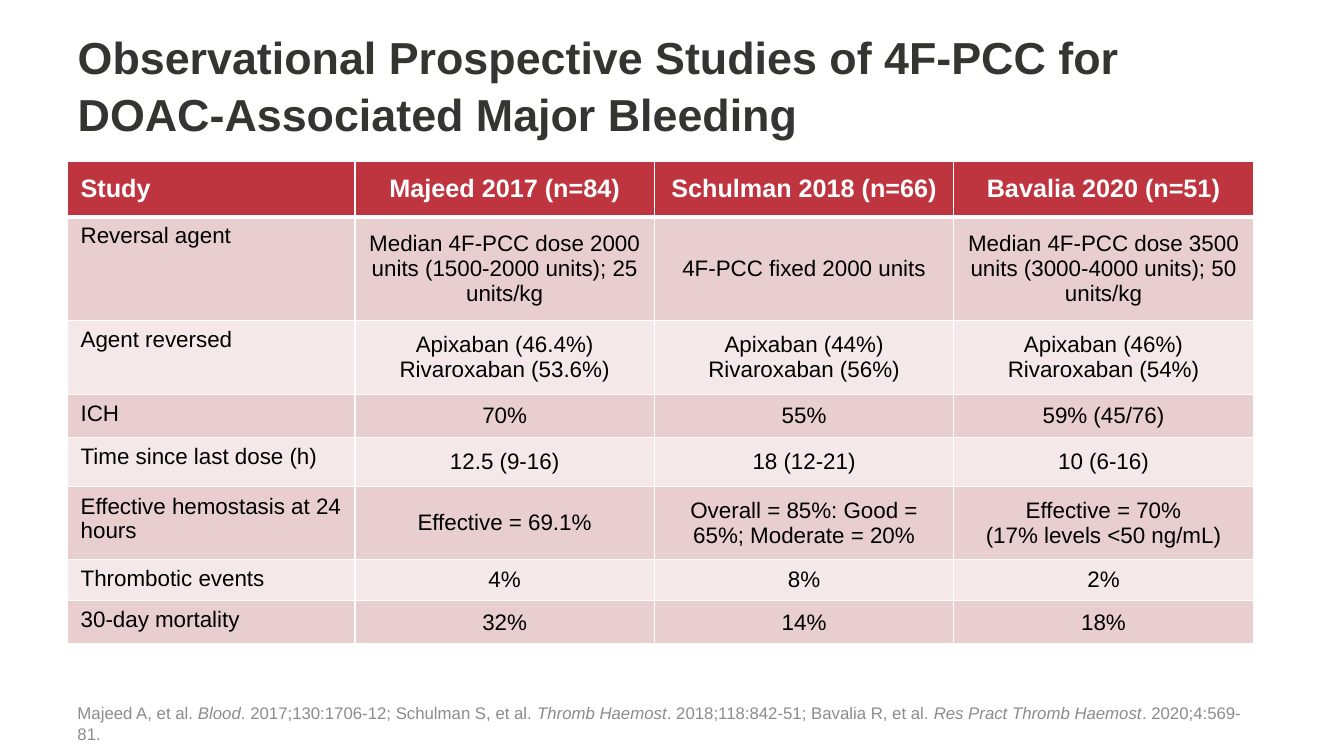
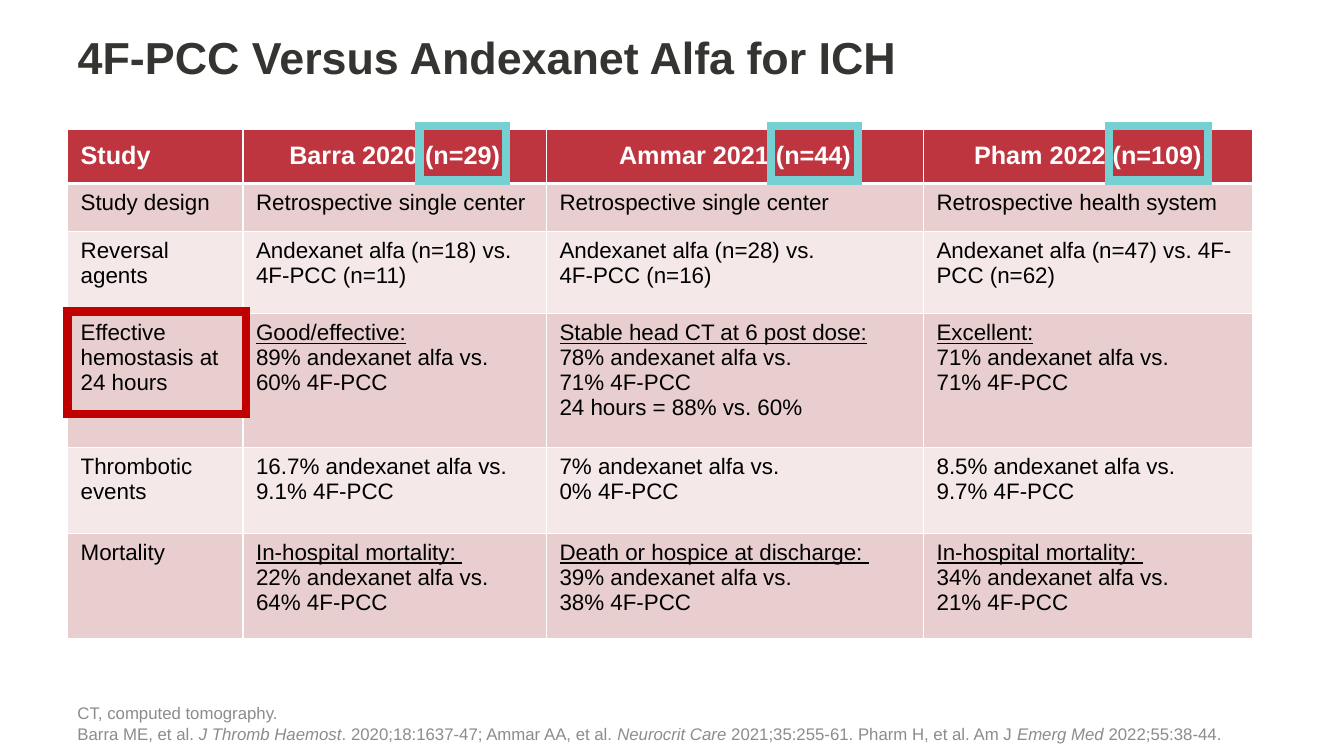
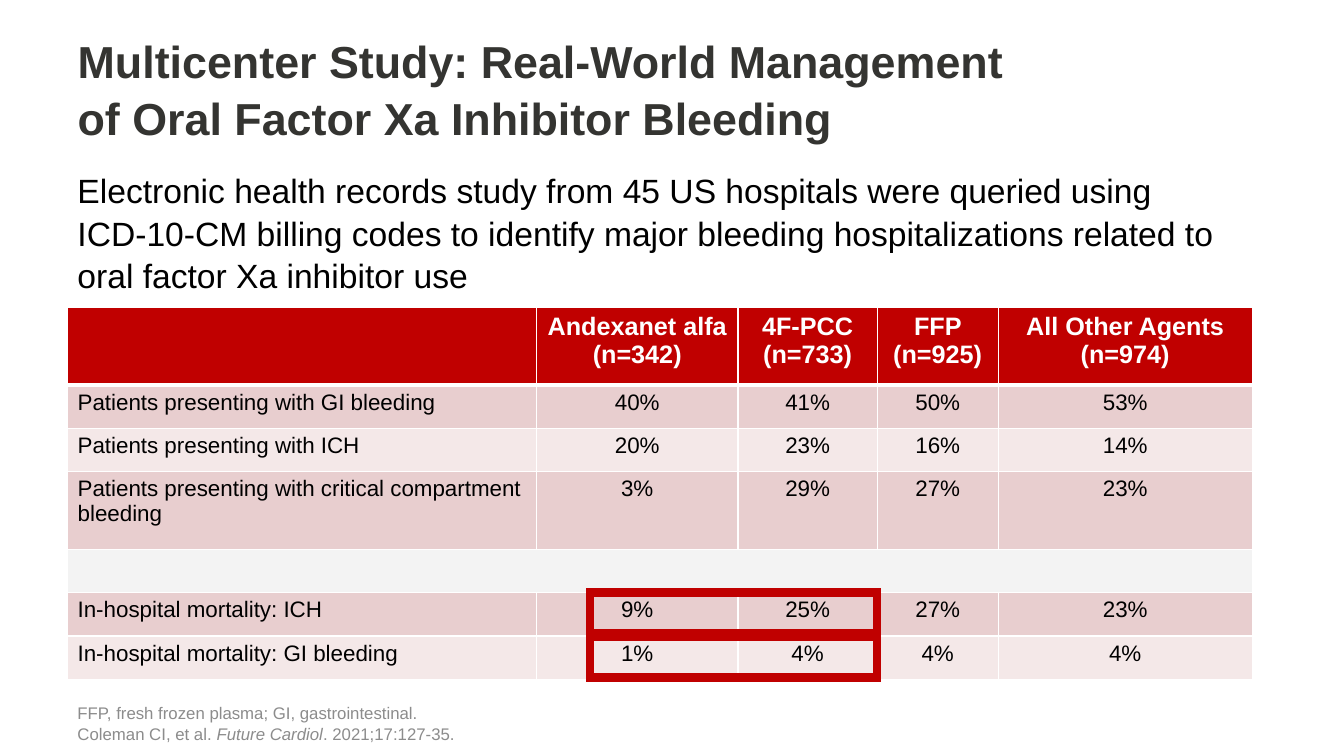
"""Builds three table slides on reversing factor Xa inhibitor bleeding."""
from lxml import etree
from pptx import Presentation
from pptx.dml.color import RGBColor
from pptx.enum import shapes, text
from pptx.oxml import ns
from pptx.util import Inches, Pt

FONT = "Arial"
WHITE = RGBColor(0xFF, 0xFF, 0xFF)
BLACK = RGBColor(0, 0, 0)
DARK = RGBColor(0x34, 0x34, 0x31)
GRAY = RGBColor(0x8C, 0x8C, 0x8C)
ROSE = RGBColor(0xBE, 0x35, 0x40)
RED = RGBColor(0xC0, 0, 0)
TEAL = RGBColor(0x75, 0xD1, 0xD1)
PINK = RGBColor(0xE8, 0xCE, 0xCF)
PALE = RGBColor(0xF4, 0xE8, 0xE8)
MIST = RGBColor(0xF3, 0xF3, 0xF3)
LEFT, WIDTH = 0.67, 11.75
TOP, MID, LOW = (text.MSO_ANCHOR.TOP, text.MSO_ANCHOR.MIDDLE,
                 text.MSO_ANCHOR.BOTTOM)


def write(frame, lines, size, color, bold=False, mark="italic",
          align=text.PP_ALIGN.LEFT, pitch=None):
    """Fill a frame line by line; parts between asterisks get the mark."""
    for i, line in enumerate(lines):
        para = frame.add_paragraph() if i else frame.paragraphs[0]
        para.alignment = align
        para.line_spacing = pitch
        for j, part in enumerate(line.split("*")):
            if not part:
                continue
            para.add_line_break() if part == "\v" else None
            run = para.add_run()
            run.text = part
            font = run.font
            font.name, font.size, font.bold = FONT, Pt(size), bold
            font.color.rgb = color
            if j % 2:
                setattr(font, mark, True)


def add_title(deck, lines, anchor=TOP):
    """Add a title-only slide and place its title."""
    slide = deck.slides.add_slide(deck.slide_layouts[5])
    title = slide.shapes.title
    title.left, title.top = Inches(LEFT), Inches(0.22)
    title.width, title.height = Inches(WIDTH), Inches(1.3)
    frame = title.text_frame
    frame.auto_size = text.MSO_AUTO_SIZE.NONE
    frame.vertical_anchor = anchor
    write(frame, lines, 32, DARK, bold=True, pitch=1.05)
    return slide


def add_text(slide, top, high, lines, size, color, anchor=TOP):
    """Add a full-width text box."""
    box = slide.shapes.add_textbox(Inches(LEFT), Inches(top),
                                   Inches(WIDTH), Inches(high))
    box.text_frame.word_wrap = True
    box.text_frame.vertical_anchor = anchor
    write(box.text_frame, lines, size, color, pitch=1.05)


def add_notes(slide, *lines):
    """Add the source lines at the foot of the slide."""
    add_text(slide, 6.95, 0.48, lines, 12, GRAY, LOW)


def edge(cell, row):
    """Draw white cell borders, thick between header and body."""
    props = cell._tc.get_or_add_tcPr()
    wide = {(0, "B"): 3, (1, "T"): 3}
    for side in "LRTB":
        line = etree.SubElement(props, ns.qn("a:ln" + side),
                                w=str(Pt(wide.get((row, side), 1))))
        fill = etree.SubElement(line, ns.qn("a:solidFill"))
        etree.SubElement(fill, ns.qn("a:srgbClr"), val=str(WHITE))


def add_table(slide, top, cols, highs, rows, head, pads,
              center=True, body=TOP, first=TOP):
    """Add a banded table; an empty row is merged across."""
    grid = slide.shapes.add_table(
        len(rows), len(cols), Inches(LEFT), Inches(top),
        Inches(sum(cols)), Inches(sum(highs))).table
    for col, wide in zip(grid.columns, cols):
        col.width = Inches(wide)
    for row, high in zip(grid.rows, highs):
        row.height = Inches(high)
    for r, row in enumerate(rows):
        fill = head if r == 0 else PINK if r % 2 else PALE
        if not row:
            grid.cell(r, 0).merge(grid.cell(r, len(cols) - 1))
            fill = MIST
        for c in range(len(cols)):
            cell = grid.cell(r, c)
            edge(cell, r)
            cell.fill.solid()
            cell.fill.fore_color.rgb = fill
            cell.margin_left = cell.margin_right = Inches(pads[0])
            cell.margin_top = cell.margin_bottom = Inches(pads[1])
            cell.vertical_anchor = first if r == 0 else body if c else TOP
            if row and row[c]:
                mid = c and (center or r == 0)
                write(cell.text_frame, row[c].split("\n"),
                      16 if r else 18, BLACK if r else WHITE,
                      bold=r == 0, mark="underline",
                      align=text.PP_ALIGN.CENTER if mid
                      else text.PP_ALIGN.LEFT)


def add_frame(slide, left, top, wide, high, color=RED,
              kind=shapes.MSO_SHAPE.RECTANGLE):
    """Add an unfilled, sharp-cornered highlight frame."""
    box = slide.shapes.add_shape(kind, Inches(left), Inches(top),
                                 Inches(wide), Inches(high))
    if len(box.adjustments):
        box.adjustments[0] = 0
    box.shadow.inherit = False
    box.fill.background()
    box.line.color.rgb = color
    box.line.width = Pt(6)
    line = box._element.spPr.find(ns.qn("a:ln"))
    etree.SubElement(line, ns.qn("a:miter"), lim="800000")


def add_trials(deck):
    """Build the slide on prospective studies."""
    slide = add_title(deck, ["Observational Prospective Studies of 4F-PCC "
                             "for DOAC-Associated Major Bleeding"])
    rows = [
        ["Study", "Majeed 2017 (n=84)", "Schulman 2018 (n=66)",
         "Bavalia 2020 (n=51)"],
        ["Reversal agent",
         "Median 4F-PCC dose 2000 units (1500-2000 units); 25 units/kg",
         "4F-PCC fixed 2000 units",
         "Median 4F-PCC dose 3500 units (3000-4000 units); 50 units/kg"],
        ["Agent reversed", "Apixaban (46.4%)\nRivaroxaban (53.6%)",
         "Apixaban (44%)\nRivaroxaban (56%)",
         "Apixaban (46%)\nRivaroxaban (54%)"],
        ["ICH", "70%", "55%", "59% (45/76)"],
        ["Time since last dose (h)", "12.5 (9-16)", "18 (12-21)",
         "10 (6-16)"],
        ["Effective hemostasis at 24 hours", "Effective = 69.1%",
         "Overall = 85%: Good = 65%; Moderate = 20%",
         "Effective = 70%\n(17% levels <50 ng/mL)"],
        ["Thrombotic events", "4%", "8%", "2%"],
        ["30-day mortality", "32%", "14%", "18%"],
    ]
    add_table(slide, 1.6, [2.85] + [2.97] * 3,
              [0.55, 1.03, 0.73, 0.43, 0.49, 0.72, 0.41, 0.43],
              rows, ROSE, (0.13, 0.07), body=MID, first=MID)
    add_notes(slide, "Majeed A, et al. *Blood*. 2017;130:1706-12; Schulman S, "
              "et al. *Thromb Haemost*. 2018;118:842-51; Bavalia R, et al. "
              "*Res Pract Thromb Haemost*. 2020;4:569-81.")


def add_versus(deck):
    """Build the slide comparing the two agents."""
    slide = add_title(deck, ["4F-PCC Versus Andexanet Alfa for ICH"])
    rows = [
        ["Study", "Barra 2020 (n=29)", "Ammar 2021 (n=44)",
         "Pham 2022 (n=109)"],
        ["Study design", "Retrospective single center",
         "Retrospective single center", "Retrospective health system"],
        ["Reversal agents", "Andexanet alfa (n=18) vs. 4F-PCC (n=11)",
         "Andexanet alfa (n=28) vs.\n4F-PCC (n=16)",
         "Andexanet alfa (n=47) vs. 4F-PCC (n=62)"],
        ["Effective hemostasis at 24 hours",
         "*Good/effective:*\n89% andexanet alfa vs.\n60% 4F-PCC",
         "*Stable head CT at 6 post dose: *78% andexanet alfa vs.\n"
         "71% 4F-PCC\n24 hours = 88% vs. 60%",
         "*Excellent:*\n71% andexanet alfa vs.\n71% 4F-PCC"],
        ["Thrombotic events", "16.7% andexanet alfa vs. 9.1% 4F-PCC",
         "7% andexanet alfa vs.\n0% 4F-PCC",
         "8.5% andexanet alfa vs.\n9.7% 4F-PCC"],
        ["Mortality",
         "*In-hospital mortality: *\n22% andexanet alfa vs.\n64% 4F-PCC",
         "*Death or hospice at discharge: *\n39% andexanet alfa vs.\n"
         "38% 4F-PCC",
         "*In-hospital mortality: *\n34% andexanet alfa vs.\n21% 4F-PCC"],
    ]
    add_table(slide, 1.28, [1.74, 3.01, 3.74, 3.26],
              [0.54, 0.48, 0.81, 1.33, 0.85, 1.05],
              rows, ROSE, (0.13, 0.07), center=False, first=MID)
    add_frame(slide, LEFT, 3.09, 1.77, 1.02)
    for left, wide in [(4.16, 0.86), (7.65, 0.86), (11, 0.98)]:
        add_frame(slide, left, 1.25, wide, 0.54, TEAL,
                  shapes.MSO_SHAPE.ROUNDED_RECTANGLE)
    add_notes(slide, "CT, computed tomography.",
              "Barra ME, et al. *J Thromb Haemost*. 2020;18:1637-47; "
              "Ammar AA, et al. *Neurocrit Care *2021;35:255-61. "
              "Pharm H, et al. Am J *Emerg Med *2022;55:38-44.")


def add_survey(deck):
    """Build the slide on the multicenter study."""
    slide = add_title(deck, ["Multicenter Study: Real-World Management",
                             "of Oral Factor Xa Inhibitor Bleeding"], MID)
    add_text(slide, 1.62, 1.43, [
        "Electronic health records study from 45 US hospitals were queried "
        "using ICD-10-CM billing codes to identify major bleeding "
        "hospitalizations related to oral factor Xa inhibitor use"],
        24, BLACK)
    rows = [
        ["", "Andexanet alfa (n=342)", "4F-PCC (n=733)", "FFP (n=925)",
         "All Other Agents (n=974)"],
        ["Patients presenting with GI bleeding", "40%", "41%", "50%", "53%"],
        ["Patients presenting with ICH", "20%", "23%", "16%", "14%"],
        ["Patients presenting with critical compartment bleeding",
         "3%", "29%", "27%", "23%"],
        [],
        ["In-hospital mortality: ICH", "9%", "25%", "27%", "23%"],
        ["In-hospital mortality: GI bleeding", "1%", "4%", "4%", "4%"],
    ]
    add_table(slide, 3.05, [4.65, 2, 1.38, 1.2, 2.52],
              [0.77, 0.43, 0.43, 0.77, 0.43, 0.43, 0.43],
              rows, RED, (0.1, 0.05))
    for top in (5.88, 6.32):
        add_frame(slide, 5.85, top, 2.85, 0.4)
    add_notes(slide, "FFP, fresh frozen plasma; GI, gastrointestinal.",
              "Coleman CI, et al. *Future Cardiol*. 2021;17:127-35.")


def main():
    """Build and save the deck."""
    deck = Presentation()
    deck.slide_width, deck.slide_height = Inches(13.33), Inches(7.5)
    add_trials(deck)
    add_versus(deck)
    add_survey(deck)
    deck.save("out.pptx")


if __name__ == "__main__":
    main()
